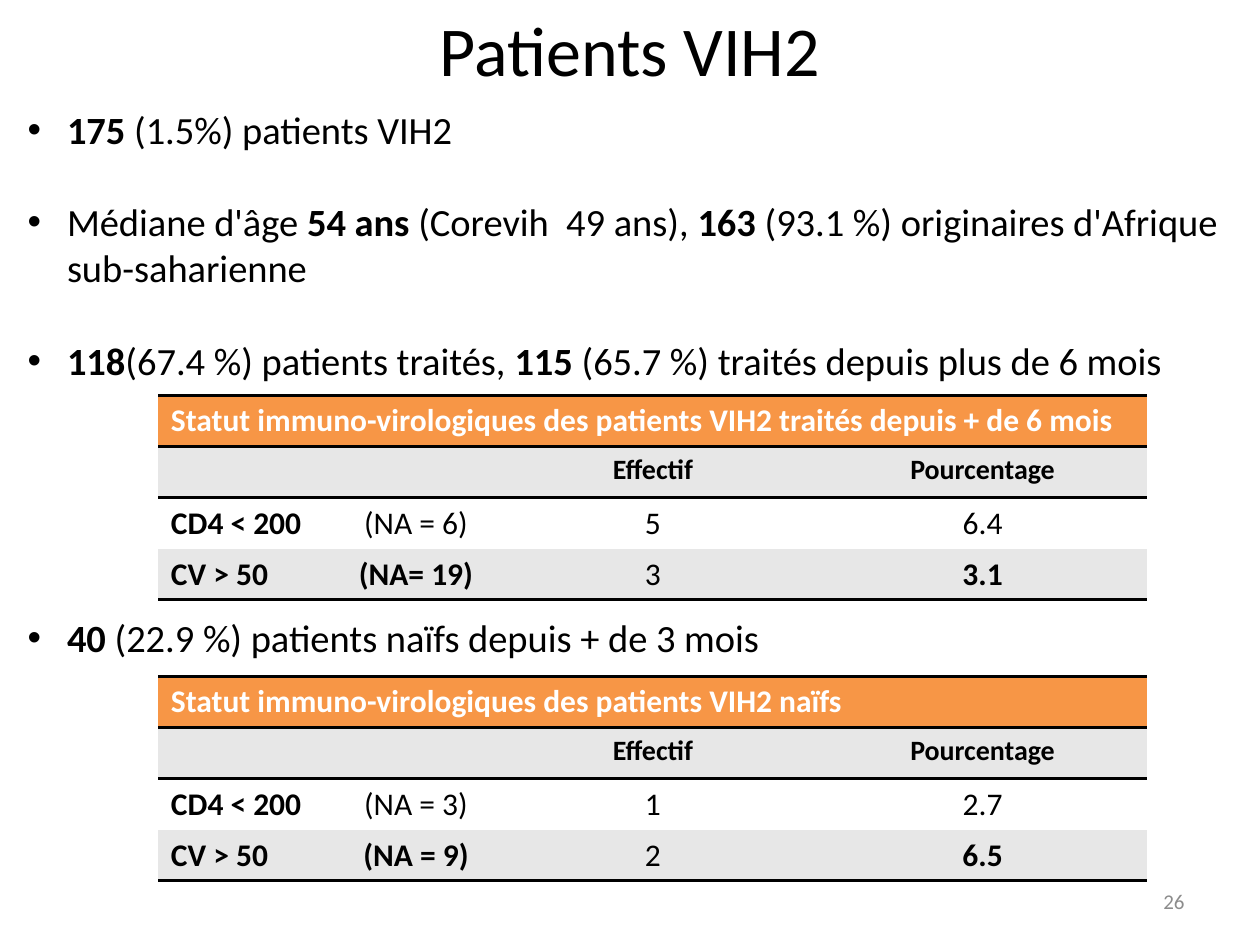
from dataclasses import dataclass

from lxml import etree
from pptx import Presentation
from pptx import util as u
from pptx.dml.color import RGBColor
from pptx.enum import text
from pptx.oxml import ns
from pptx.slide import Slide

BLACK = RGBColor(0x00, 0x00, 0x00)
WHITE = RGBColor(0xFF, 0xFF, 0xFF)
GREY = RGBColor(0x8C, 0x8C, 0x8C)
BAND = RGBColor(0xE7, 0xE7, 0xE7)
ORANGE = RGBColor(0xF7, 0x96, 0x46)
LEFT, CENTER, RIGHT = text.PP_ALIGN.LEFT, text.PP_ALIGN.CENTER, text.PP_ALIGN.RIGHT
NO_GRID = "{2D5ABB26-0587-4C30-8999-92F81FD0307C}"


def add_xml(parent, tag, index=None, **attributes):
    child = etree.Element(ns.qn(tag), attributes)
    parent.insert(len(parent) if index is None else index, child)
    return child


@dataclass
class StatusSlide:
    """Hold the style and the current slide, with a method per kind of element."""

    slide: Slide
    font_name: str = "Calibri"
    line_height: float = 26.4
    indent: float = 22.5
    column_width: float = 188.4
    row_height: float = 29.2
    label_tab: float = 140

    def set_text(self, paragraph, content, size, color=BLACK, align=LEFT):
        paragraph.alignment = align
        font = paragraph.font
        font.name, font.size, font.color.rgb = self.font_name, u.Pt(size), color
        for position, part in enumerate(content.split("*")):
            if part:
                run = paragraph.add_run()
                run.text = part
                run.font.bold = position % 2 == 1

    def frame(self, left, top, width, height, anchor=text.MSO_ANCHOR.TOP):
        box = self.slide.shapes.add_textbox(u.Pt(left), u.Pt(top), u.Pt(width), u.Pt(height))
        box.text_frame.word_wrap = True
        box.text_frame.vertical_anchor = anchor
        return box.text_frame

    def title(self, content):
        self.set_text(self.frame(0, 0, 720, 55.5).paragraphs[0], content, 40, align=CENTER)

    def page_number(self, content):
        footer = self.frame(516, 500.5, 168, 28.8, text.MSO_ANCHOR.MIDDLE)
        self.set_text(footer.paragraphs[0], content, 12, GREY, RIGHT)

    def bullets(self, findings):
        body = self.frame(8.7, 57, 697, 487)
        for number, (content, lines_before) in enumerate(findings):
            finding = body.add_paragraph() if number else body.paragraphs[0]
            finding.line_spacing = u.Pt(self.line_height)
            finding.space_before = u.Pt(lines_before * self.line_height)
            properties = finding._p.get_or_add_pPr()
            properties.set("marL", str(u.Pt(self.indent)))
            properties.set("indent", str(-u.Pt(self.indent)))
            add_xml(properties, "a:buFont", typeface="Arial")
            add_xml(properties, "a:buChar", char="•")
            self.set_text(finding, content, 22)

    def rule(self, cell, *sides):
        properties = cell._tc.get_or_add_tcPr()
        for index, side in enumerate(sides):
            line = add_xml(properties, side, index, w=str(u.Pt(2)))
            add_xml(add_xml(line, "a:solidFill"), "a:srgbClr", val=str(BLACK))

    def fill_cell(self, cell, content, size, color, align, background):
        cell.fill.solid()
        cell.fill.fore_color.rgb = background
        paragraph = cell.text_frame.paragraphs[0]
        if "\t" in content:
            tabs = add_xml(paragraph._p.get_or_add_pPr(), "a:tabLst")
            add_xml(tabs, "a:tab", pos=str(u.Pt(self.label_tab)), algn="ctr")
        self.set_text(paragraph, content, size, color, align)

    def status_table(self, top, heading, measures):
        rows = [(heading, "", ""), ("", "*Effectif*", "*Pourcentage*"), *measures]
        table = self.slide.shapes.add_table(
            len(rows), 3, u.Pt(90.5), u.Pt(top),
            u.Pt(3 * self.column_width), u.Pt(len(rows) * self.row_height)).table
        table._tbl.tblPr.find(ns.qn("a:tableStyleId")).text = NO_GRID
        for column in table.columns:
            column.width = u.Pt(self.column_width)
        table.cell(0, 0).merge(table.cell(0, 2))
        for r, row in enumerate(rows):
            table.rows[r].height = u.Pt(self.row_height)
            background = ORANGE if r == 0 else BAND if r % 2 else WHITE
            for c, content in enumerate(row):
                cell = table.cell(r, c)
                self.fill_cell(cell, content, 16 if r == 1 and c else 18,
                               BLACK if r else WHITE, CENTER if c else LEFT, background)
                if r == 0:
                    self.rule(cell, "a:lnT", "a:lnB")
                elif r == 1:
                    self.rule(cell, "a:lnT")
                elif r == len(rows) - 1:
                    self.rule(cell, "a:lnB")


def main():
    deck = Presentation()
    deck.slide_width, deck.slide_height = u.Pt(720), u.Pt(540)
    page = StatusSlide(deck.slides.add_slide(deck.slide_layouts[6]))
    page.page_number("26")
    page.title("Patients VIH2")
    page.bullets([
        ("*175* (1.5%) patients VIH2", 0),
        ("Médiane d'âge *54 ans* (Corevih  49 ans), *163* (93.1 %) "
         "originaires d'Afrique sub-saharienne", 1),
        ("*118*(67.4 %) patients traités, *115* (65.7 %) traités depuis plus de 6 mois", 1),
        ("*40* (22.9 %) patients naïfs depuis + de 3 mois", 5),
    ])
    page.status_table(
        226, "*Statut immuno-virologiques des patients VIH2 traités depuis + de 6 mois*",
        [("*CD4 < 200*\t(NA = 6)", "5", "6.4"), ("*CV > 50\t(NA= 19)*", "3", "*3.1*")])
    page.status_table(
        386.6, "*Statut immuno-virologiques des patients VIH2 naïfs*",
        [("*CD4 < 200*\t(NA = 3)", "1", "2.7"), ("*CV > 50\t(NA = 9)*", "2", "*6.5*")])
    deck.save("out.pptx")


if __name__ == "__main__":
    main()
